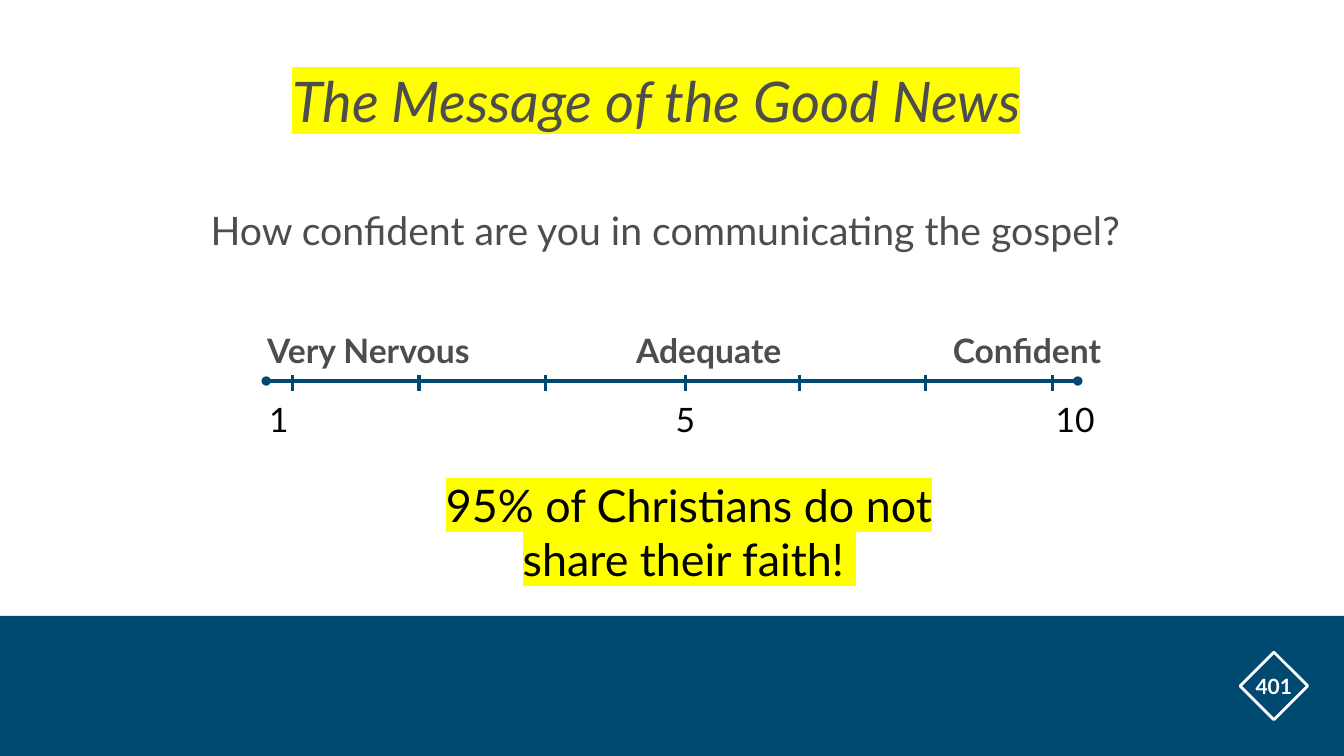
from lxml import etree
from pptx import Presentation
from pptx.dml.color import RGBColor
from pptx.enum.shapes import MSO_CONNECTOR, MSO_SHAPE
from pptx.enum.text import MSO_ANCHOR, MSO_AUTO_SIZE, PP_ALIGN
from pptx.oxml.ns import qn
from pptx.util import Inches, Pt

LINE = MSO_CONNECTOR.STRAIGHT
RECT, DIAMOND = MSO_SHAPE.RECTANGLE, MSO_SHAPE.DIAMOND
TOP, MIDDLE, BOTTOM = MSO_ANCHOR.TOP, MSO_ANCHOR.MIDDLE, MSO_ANCHOR.BOTTOM
LEFT, CENTER = PP_ALIGN.LEFT, PP_ALIGN.CENTER
GROW = MSO_AUTO_SIZE.SHAPE_TO_FIT_TEXT
COLORS = {"navy": "004970", "gray": "4D4D4F", "black": "000000",
          "white": "FFFFFF", "yellow": "FFFF00"}


def color(name):
    """Return the named palette colour."""
    return RGBColor.from_string(COLORS[name])


def style(run, size, ink, bold=False, italic=False, mark=False):
    """Format a run, with a yellow highlight if marked."""
    font = run.font
    font.name, font.size = "Lato", Pt(size)
    font.bold, font.italic = bold, italic
    font.color.rgb = color(ink)
    if mark:
        glow = etree.Element(qn("a:highlight"))
        etree.SubElement(glow, qn("a:srgbClr"), val=COLORS["yellow"])
        font._element.find(qn("a:solidFill")).addnext(glow)


def fill_text(frame, text, size, ink, anchor=TOP, align=LEFT, space=None,
              inset=(0, 0, 0, 0), wrap=False, **looks):
    """Write text into a frame and format its paragraphs."""
    frame.word_wrap, frame.vertical_anchor = wrap, anchor
    (frame.margin_left, frame.margin_top,
     frame.margin_right, frame.margin_bottom) = [Inches(n) for n in inset]
    frame.text = text
    for para in frame.paragraphs:
        para.alignment, para.line_spacing = align, space
        for run in para.runs:
            style(run, size, ink, **looks)


def add_text(slide, box, text, size, ink, grow=False, **looks):
    """Add a text box in the given box."""
    frame = slide.shapes.add_textbox(*[Inches(n) for n in box]).text_frame
    fill_text(frame, text, size, ink, **looks)
    if grow:
        frame.auto_size = GROW


def add_line(slide, x1, y1, x2, y2, dots=False):
    """Add a navy line, with round ends if dotted."""
    line = slide.shapes.add_connector(LINE, *[Inches(n) for n in (x1, y1, x2, y2)])
    line.line.color.rgb, line.line.width = color("navy"), Pt(2.25)
    if dots:
        for end in ("a:headEnd", "a:tailEnd"):
            etree.SubElement(line.line._get_or_add_ln(), qn(end), type="oval")
    etree.SubElement(line._element.spPr, qn("a:effectLst"))


def add_band(slide, box):
    """Draw the footer band and its number badge."""
    left, top, width, height = box
    band = slide.shapes.add_shape(RECT, *[Inches(n) for n in box])
    band.shadow.inherit = False
    band.fill.solid()
    band.fill.fore_color.rgb = color("navy")
    band.line.fill.background()
    side = 0.67
    badge = slide.shapes.add_shape(
        DIAMOND, Inches(left + width - 1.03), Inches(top + (height - side) / 2),
        Inches(side), Inches(side))
    badge.shadow.inherit = False
    badge.fill.background()
    badge.line.color.rgb, badge.line.width = color("white"), Pt(2)
    etree.SubElement(badge.line._get_or_add_ln(), qn("a:round"))
    fill_text(badge.text_frame, "401", 15, "white", anchor=MIDDLE,
              align=CENTER, bold=True)


def add_scale(slide, box):
    """Draw the confidence scale with ticks, labels and numbers."""
    left, top, width, height = box
    axis = top + 0.45
    add_line(slide, left, axis, left + width, axis, dots=True)
    middle, first, last = left + 4.16, left + 0.26, left + 7.8
    for i in range(7):
        x = middle if i == 3 else first + i * (last - first) / 6
        add_line(slide, x, axis - 0.06, x, axis + 0.1)
    labels = [("Very Nervous", 0.01, 2.15), ("Adequate", 3.67, 1.54),
              ("Confident", 6.81, 1.57)]
    for text, x, wide in labels:
        add_text(slide, (left + x, top, wide, 0.34), text, 24, "gray", grow=True,
                 anchor=MIDDLE, space=0.85, inset=(0, 0, 0.07, 0), bold=True)
    numbers = [("1", 0.03, 0.27, 0.07, LEFT), ("5", 4.06, 0.19, 0, CENTER),
               ("10", 7.83, 0.39, 0, LEFT)]
    for text, x, wide, pad, align in numbers:
        add_text(slide, (left + x, top + height - 0.34, wide, 0.34), text, 24,
                 "black", grow=True, anchor=MIDDLE, align=align, space=0.85,
                 inset=(0, 0, pad, 0))


def add_heads(slide, box):
    """Place the title and the question below it."""
    left, top, width, height = box
    add_text(slide, (left + 0.81, top, 8.82, 0.78), "The Message of the Good News",
             40, "gray", anchor=BOTTOM, space=0.8, wrap=True, italic=True, mark=True)
    add_text(slide, (left, top + height - 0.57, width, 0.57),
             "How confident are you in communicating the gospel?",
             28, "gray", space=0.85, wrap=True)


def add_claim(slide, box):
    """Place the highlighted claim."""
    add_text(slide, box, "95% of Christians do not\nshare their faith! ", 32, "black",
             grow=True, align=CENTER, inset=(0.1, 0.05, 0.1, 0.05), mark=True)


def main():
    """Build and save the slide."""
    deck = Presentation()
    deck.slide_width, deck.slide_height = Inches(13.33), Inches(7.5)
    slide = deck.slides.add_slide(deck.slide_layouts[6])
    add_band(slide, (0, 6.11, 13.33, 1.39))
    add_heads(slide, (2.09, 0.54, 10.16, 2.15))
    add_scale(slide, (2.64, 3.33, 8.05, 1.03))
    add_claim(slide, (4.29, 4.69, 5.09, 1.18))
    deck.save("out.pptx")


if __name__ == "__main__":
    main()
